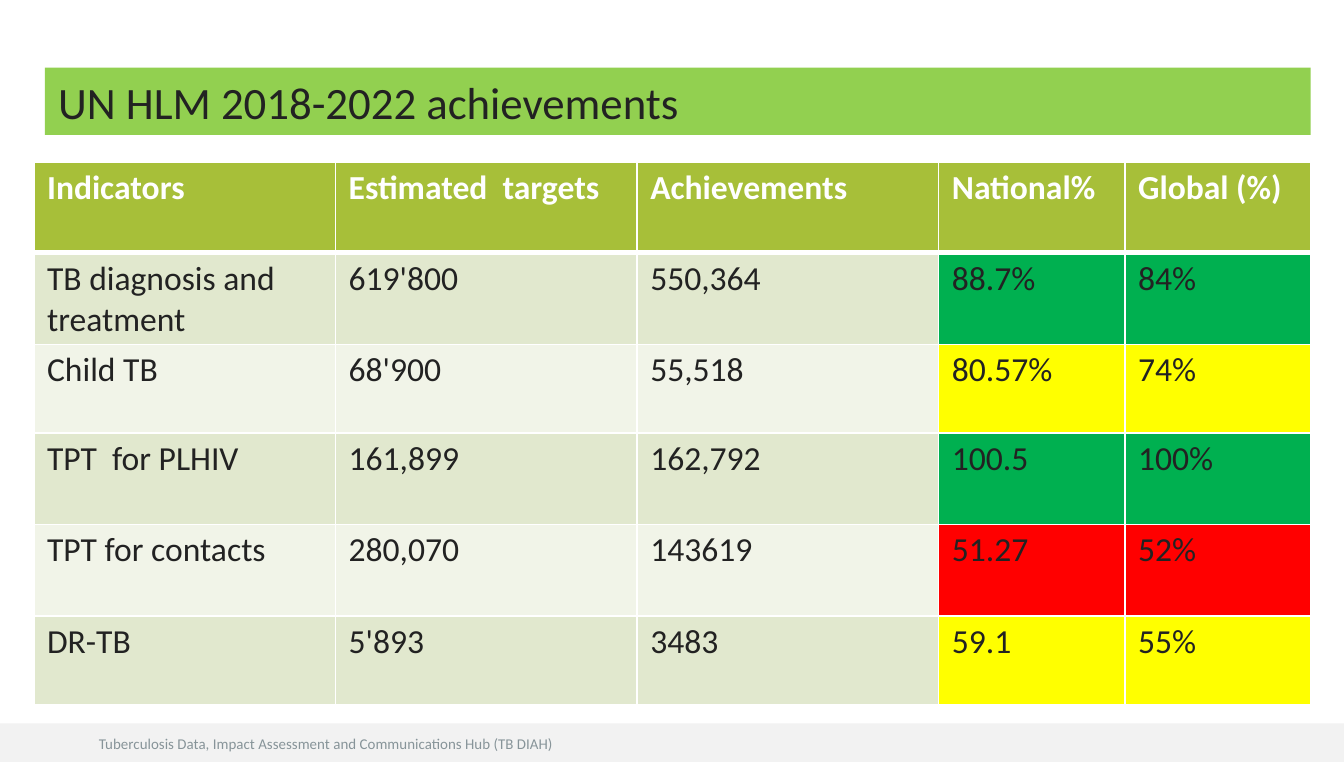
from lxml.etree import SubElement
from pptx import Presentation
from pptx.dml.color import RGBColor
from pptx.enum.shapes import MSO_SHAPE
from pptx.enum.text import MSO_ANCHOR
from pptx.oxml.ns import qn
from pptx.util import Cm, Pt

COLORS = {
    "title": "92D050", "footer": "F2F2F2", "footer_text": "879499",
    "text": "222222", "white": "FFFFFF", "header": "A7BF39",
    "band_dark": "E1E8CE", "band_light": "F1F4E8",
    "green": "00B050", "yellow": "FFFF00", "red": "FF0000",
}
ROWS = [
    ("Indicators", "Estimated  targets", "Achievements", "National%", "Global (%)"),
    ("TB diagnosis and treatment", "619'800", "550,364", "88.7%", "84%"),
    ("Child TB", "68'900", "55,518", "80.57%", "74%"),
    ("TPT  for PLHIV", "161,899", "162,792", "100.5", "100%"),
    ("TPT for contacts", "280,070", "143619", "51.27", "52%"),
    ("DR-TB", "5'893", "3483", "59.1", "55%"),
]
RATINGS = ["header", "green", "yellow", "green", "red", "yellow"]
COL_WIDTHS = [5.7, 5.7, 5.7, 3.52, 3.52]
ROW_HEIGHTS = [1.72, 1.73, 1.67, 1.73, 1.73, 1.67]


def write(tf, text, size=18, color="text", bold=False):
    tf.word_wrap = True
    r = tf.paragraphs[0].add_run()
    r.text = text
    r.font.name = "Calibri"
    r.font.size = Pt(size)
    r.font.bold = bold
    r.font.color.rgb = RGBColor.from_string(COLORS[color])


def add_borders(cell, bottom_widths):
    """Draw white cell borders, 1 pt except where top or bottom is given."""
    tc_pr = cell._tc.get_or_add_tcPr()
    for position, side in enumerate(("lnL", "lnR", "lnT", "lnB")):
        width = bottom_widths.get(side, 1)
        ln = SubElement(tc_pr, qn(f"a:{side}"), w=str(Pt(width)))
        fill = SubElement(ln, qn("a:solidFill"))
        SubElement(fill, qn("a:srgbClr"), val=COLORS["white"])
        tc_pr.remove(ln)
        tc_pr.insert(position, ln)


prs = Presentation()
prs.slide_width, prs.slide_height = Cm(25.4), Cm(14.4)
s = prs.slides.add_slide(prs.slide_layouts[6])

# Footer band and title bar
bars = []
for left, top, width, height, color in [
    (0, 13.67, 25.4, 0.73, "footer"),
    (0.85, 1.28, 23.92, 1.27, "title"),
]:
    sp = s.shapes.add_shape(MSO_SHAPE.RECTANGLE, Cm(left), Cm(top), Cm(width), Cm(height))
    sp.shadow.inherit = False
    sp.fill.solid()
    sp.fill.fore_color.rgb = RGBColor.from_string(COLORS[color])
    sp.line.fill.background()
    bars.append(sp)

title = bars[1].text_frame
title.vertical_anchor = MSO_ANCHOR.BOTTOM
write(title, "UN HLM 2018-2022 achievements", size=24)
title.paragraphs[0].alignment = 1

footer = s.shapes.add_textbox(Cm(1.62), Cm(13.76), Cm(12.7), Cm(0.6)).text_frame
write(footer, "Tuberculosis Data, Impact Assessment and Communications Hub (TB DIAH)",
      size=8, color="footer_text")

# Achievements table
table = s.shapes.add_table(len(ROWS), len(COL_WIDTHS), Cm(0.64), Cm(3.06),
                           Cm(sum(COL_WIDTHS)), Cm(sum(ROW_HEIGHTS))).table
for column, width in zip(table.columns, COL_WIDTHS):
    column.width = Cm(width)
for i, (row, height) in enumerate(zip(ROWS, ROW_HEIGHTS)):
    table.rows[i].height = Cm(height)
    is_header = i == 0
    band = "header" if is_header else "band_dark" if i % 2 else "band_light"
    for j, text in enumerate(row):
        cell = table.cell(i, j)
        cell.margin_left = cell.margin_right = Cm(0.25)
        cell.margin_top = cell.margin_bottom = Cm(0.1)
        cell.fill.solid()
        fill = RATINGS[i] if j >= 3 else band
        cell.fill.fore_color.rgb = RGBColor.from_string(COLORS[fill])
        add_borders(cell, {0: {"lnB": 3}, 1: {"lnT": 3}}.get(i, {}))
        write(cell.text_frame, text, color="white" if is_header else "text", bold=is_header)

prs.save("out.pptx")
